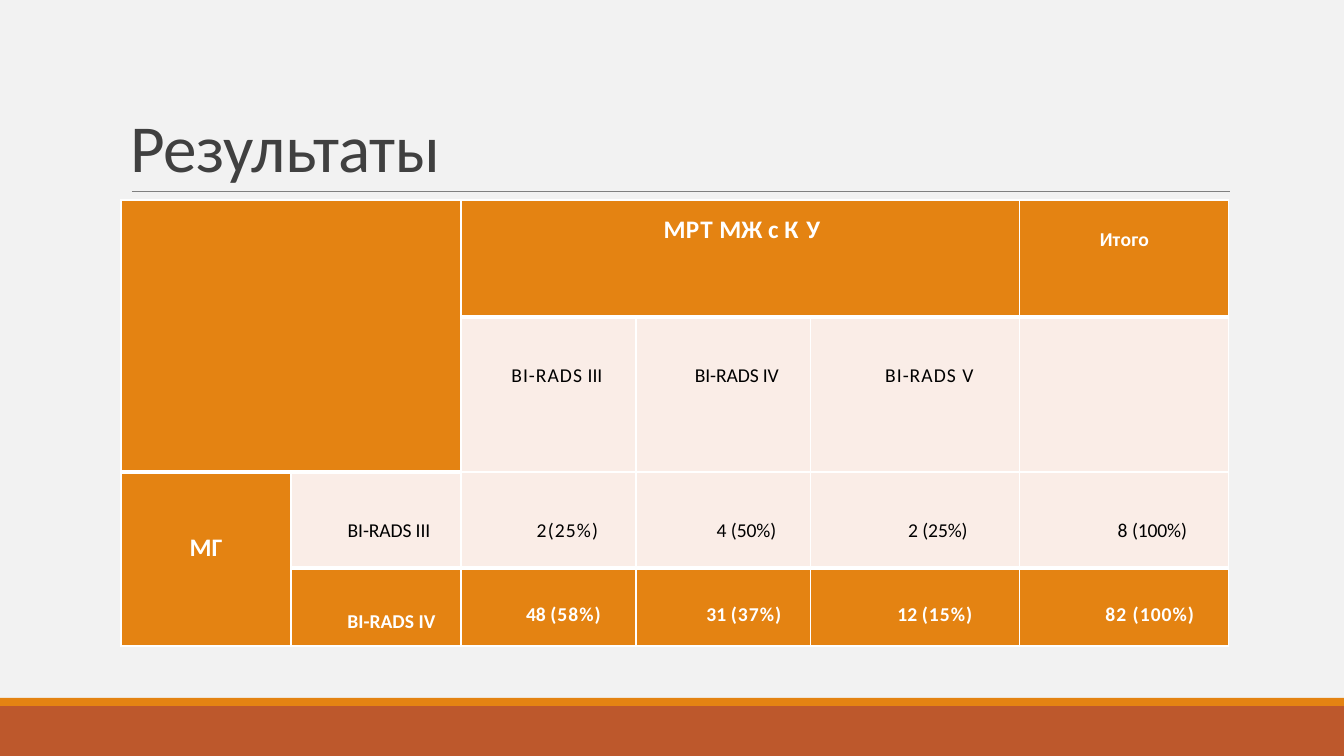
from lxml import etree
from pptx import Presentation
from pptx import util as u
from pptx.dml.color import RGBColor
from pptx.enum import shapes, text
from pptx.oxml.ns import qn

COLORS = {"bg": "F2F2F2", "orange": "E48312", "rust": "BD582C", "rule": "808080",
          "title": "404040", "pale": "FAEDE7", "white": "FFFFFF", "black": "000000"}
FONT = "Calibri"
PX = 914400 / 100.8

TITLE = [("Результаты", -0.5)]
BARS = [(706, 50, "rust"), (698, 8, "orange")]
COLS = [170, 170, 175, 175, 209, 209]
ROWS = [117, 155, 96, 78]
SPANS = {(0, 0): (2, 2), (0, 2): (1, 3), (2, 0): (2, 1)}
ORANGE_CELLS = {(0, 0), (0, 2), (0, 5), (2, 0)} | {(3, c) for c in range(1, 6)}
THICK_EDGES = {(1, c) for c in range(2, 6)} | {(2, 0), (2, 1)} | {(3, c) for c in range(1, 6)}

HEADERS = {
    (0, 2): (0, 3, 32.4, 18, [("М", 0), ("Р", 0.8), ("Т", 0.7), (" М", 0), ("Ж", -0.8),
                              (" с ", 0), ("К ", 0.7), ("У", -0.1)]),
    (0, 5): (0, 0, 37, 14, [("И", 0), ("т", 0.2), ("о", 0.1), ("г", -0.1), ("о", 0)]),
    (2, 0): (51, 0, 28.7, 18, [("МГ", 0)]),
    (3, 1): (40, 31, 1.07, 14, [("BI-RADS IV", 0)]),
}
ROW_TOPS = {1: 49, 2: 49, 3: 37}
VALUES = {
    (1, 2): (17, [("BI-RADS", 0.7), (" III", 0)]),
    (1, 3): (27, [("BI-RADS IV", -0.1)]),
    (1, 4): (28, [("BI-RADS ", 0.7), ("V", 0.5)]),
    (2, 1): (26, [("BI-RADS III", -0.1)]),
    (2, 2): (38, [("2(25%)", 0.8)]),
    (2, 3): (46, [("4 ", 0), ("(50%)", -0.1)]),
    (2, 4): (45, [("2 ", 0), ("(25%)", -0.1)]),
    (2, 5): (56, [("8 ", 0), ("(100%)", -0.1)]),
    (3, 2): (30, [("48 ", 0), ("(58%)", 0.7)]),
    (3, 3): (41, [("31 ", 0), ("(37%)", 0.7)]),
    (3, 4): (39, [("12 ", 0), ("(15%)", 0.7)]),
    (3, 5): (51, [("82 (100%)", 0.7)]),
}


def px(n):
    return u.Emu(round(n * PX))


def rgb(name):
    return RGBColor.from_string(COLORS[name])


def add_runs(p, runs, size, color, bold=False):
    for words, spacing in runs:
        r = p.add_run()
        r.text = words
        r.font.size, r.font.name, r.font.bold = u.Pt(size), FONT, bold
        r.font.color.rgb = rgb(color)
        r.font._element.set("spc", str(round(spacing * 100)))


def set_borders(cell, widths):
    tcPr = cell._tc.get_or_add_tcPr()
    for i, (side, width) in enumerate(widths.items()):
        ln = etree.Element(qn("a:ln" + side), w=str(u.Pt(width)))
        fill = etree.SubElement(ln, qn("a:solidFill"))
        etree.SubElement(fill, qn("a:srgbClr"), val=COLORS["white"])
        tcPr.insert(i, ln)


def fill_text(cell, top, indent, line, size, runs, color, bold):
    cell.margin_top = px(top)
    p = cell.text_frame.paragraphs[0]
    p.alignment = text.PP_ALIGN.CENTER
    p.line_spacing = line if line < 2 else u.Pt(line)
    p.space_after = u.Pt(0 if line < 2 else 8)
    if indent:
        p._p.get_or_add_pPr().set("marL", str(px(indent)))
    add_runs(p, runs, size, color, bold)


def add_results(s):
    frame = s.shapes.add_table(len(ROWS), len(COLS), px(121), px(200),
                               px(sum(COLS)), px(sum(ROWS)))
    table = frame.table
    table.first_row = table.horz_banding = False
    for col, width in zip(table.columns, COLS):
        col.width = px(width)
    for row, height in zip(table.rows, ROWS):
        row.height = px(height)
    for (r, c), (down, across) in SPANS.items():
        table.cell(r, c).merge(table.cell(r + down - 1, c + across - 1))

    texts = dict(HEADERS)
    for (r, c), (indent, runs) in VALUES.items():
        texts[r, c] = (ROW_TOPS[r], indent, 15.7, 14, runs)

    for r in range(len(ROWS)):
        for c in range(len(COLS)):
            cell = table.cell(r, c)
            if cell.is_spanned:
                continue
            orange = (r, c) in ORANGE_CELLS
            cell.fill.solid()
            cell.fill.fore_color.rgb = rgb("orange" if orange else "pale")
            cell.margin_left = cell.margin_right = cell.margin_top = cell.margin_bottom = 0
            down = SPANS.get((r, c), (1, 1))[0]
            set_borders(cell, {"L": 1, "R": 1,
                               "T": 3 if (r, c) in THICK_EDGES else 1,
                               "B": 3 if (r + down, c) in THICK_EDGES else 1})
            if (r, c) in texts:
                fill_text(cell, *texts[r, c], "white" if orange else "black", orange)


def main():
    prs = Presentation()
    prs.slide_width, prs.slide_height = px(1344), px(756)
    s = prs.slides.add_slide(prs.slide_layouts[6])
    s.background.fill.solid()
    s.background.fill.fore_color.rgb = rgb("bg")

    for top, height, color in BARS:
        sp = s.shapes.add_shape(shapes.MSO_SHAPE.RECTANGLE, 0, px(top), px(1344), px(height))
        sp.shadow.inherit = False
        sp.fill.solid()
        sp.fill.fore_color.rgb = rgb(color)
        sp.line.fill.background()

    rule = s.shapes.add_connector(shapes.MSO_CONNECTOR.STRAIGHT, px(132), px(191), px(1230), px(191))
    rule.line.color.rgb = rgb("rule")
    rule.line.width = u.Pt(0.5)
    etree.SubElement(rule._element.spPr, qn("a:effectLst"))

    tf = s.shapes.add_textbox(px(121), px(31), px(1109), px(160)).text_frame
    tf.word_wrap = True
    tf.vertical_anchor = text.MSO_ANCHOR.BOTTOM
    tf.paragraphs[0].line_spacing = 0.85
    add_runs(tf.paragraphs[0], TITLE, 48, "title")

    add_results(s)
    prs.save("out.pptx")


if __name__ == "__main__":
    main()
